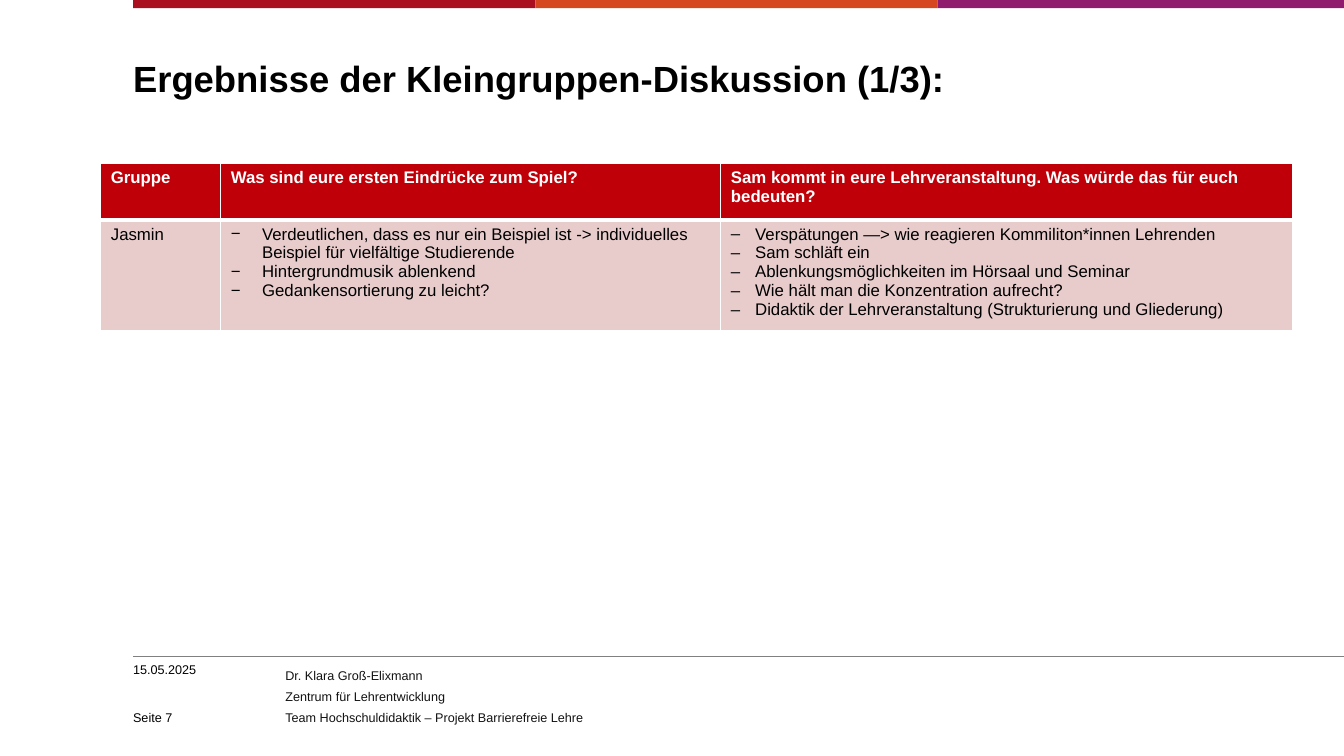
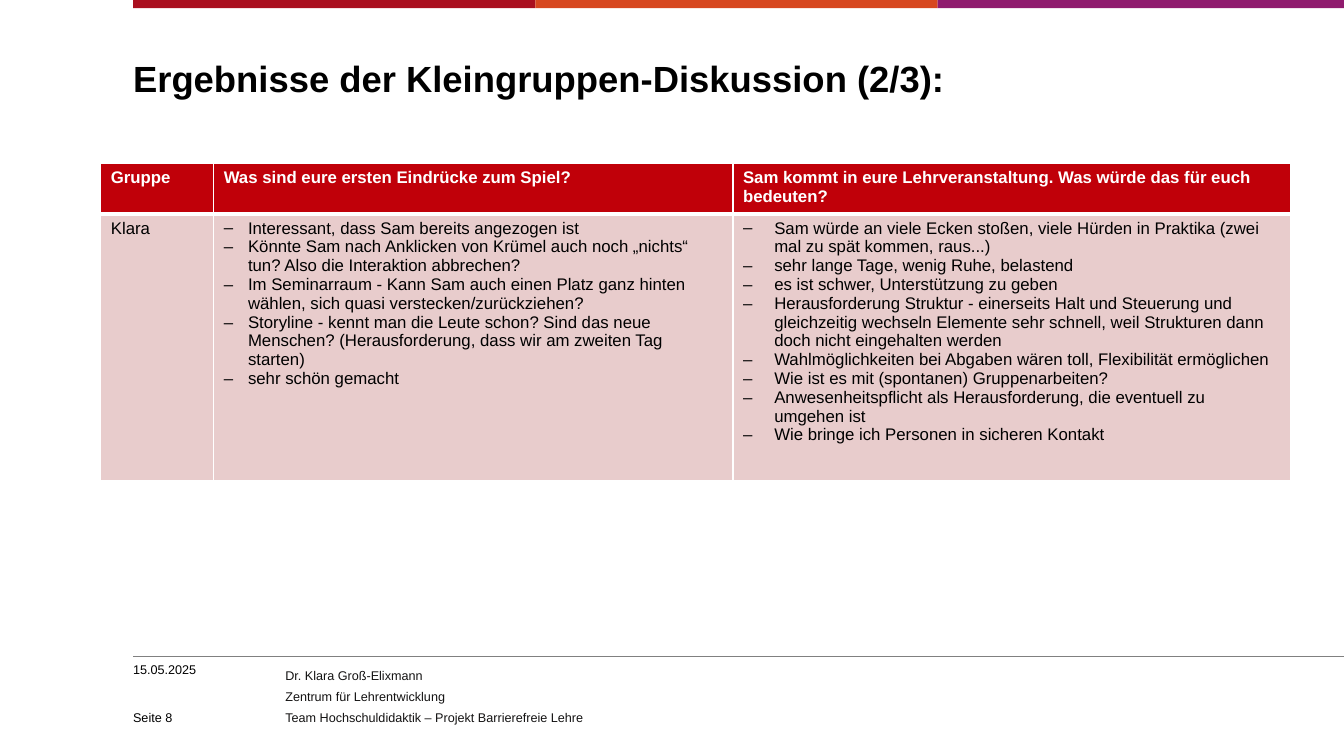
from pptx import Presentation
from pptx.dml.color import RGBColor
from pptx.enum import shapes, text
from pptx.oxml import parse_xml
from pptx.oxml.ns import nsdecls
from pptx.util import Inches, Pt

FONT = "Arial"
BLACK = RGBColor(0x00, 0x00, 0x00)
WHITE = RGBColor(0xFF, 0xFF, 0xFF)
FOOTER_GREY = RGBColor(0x14, 0x13, 0x13)
RULE_GREY = RGBColor(0x80, 0x80, 0x80)
HEADER_RED = RGBColor(0xC0, 0x00, 0x09)
BODY_PINK = RGBColor(0xE8, 0xCC, 0xCC)
BANDS = [
    (1.32, 3.99, RGBColor(0xAA, 0x0F, 0x1F)),
    (5.31, 3.99, RGBColor(0xD7, 0x47, 0x1F)),
    (9.30, 4.03, RGBColor(0x90, 0x1B, 0x6E)),
]
MARGIN = 1.32
SLIDE_WIDTH = 13.33

HEADINGS = [
    "Gruppe",
    "Was sind eure ersten Eindrücke zum Spiel?",
    "Sam kommt in eure Lehrveranstaltung. Was würde das für euch bedeuten?",
]
FOOTER = """Dr. Klara Groß-Elixmann
Zentrum für Lehrentwicklung
Team Hochschuldidaktik – Projekt Barrierefreie Lehre"""

# Each body cell: bullet, indent in inches, lines
GROUPS = [
    {
        "columns": [1.19, 4.96, 5.67],
        "rows": [0.56, 1.03],
        "cells": [
            ("", 0, ["Jasmin"]),
            ("−", 0.31, [
                "Verdeutlichen, dass es nur ein Beispiel ist -> individuelles Beispiel für vielfältige Studierende",
                "Hintergrundmusik ablenkend",
                "Gedankensortierung zu leicht?",
            ]),
            ("–", 0.24, [
                "Verspätungen —> wie reagieren Kommiliton*innen Lehrenden",
                "Sam schläft ein",
                "Ablenkungsmöglichkeiten im Hörsaal und Seminar",
                "Wie hält man die Konzentration aufrecht?",
                "Didaktik der Lehrveranstaltung (Strukturierung und Gliederung)",
            ]),
        ],
    },
    {
        "columns": [1.12, 5.15, 5.53],
        "rows": [0.47, 2.65],
        "cells": [
            ("", 0, ["Klara"]),
            ("–", 0.24, [
                "Interessant, dass Sam bereits angezogen ist",
                "Könnte Sam nach Anklicken von Krümel auch noch „nichts“ tun? Also die Interaktion abbrechen?",
                "Im Seminarraum - Kann Sam auch einen Platz ganz hinten wählen, sich quasi verstecken/zurückziehen?",
                "Storyline - kennt man die Leute schon? Sind das neue Menschen? "
                "(Herausforderung, dass wir am zweiten Tag starten)",
                "sehr schön gemacht",
            ]),
            ("–", 0.31, [
                "Sam würde an viele Ecken stoßen, viele Hürden in Praktika (zwei mal zu spät kommen, raus...)",
                "sehr lange Tage, wenig Ruhe, belastend",
                "es ist schwer, Unterstützung zu geben",
                "Herausforderung Struktur - einerseits Halt und Steuerung und gleichzeitig "
                "wechseln Elemente sehr schnell, weil Strukturen dann doch nicht eingehalten werden",
                "Wahlmöglichkeiten bei Abgaben wären toll, Flexibilität ermöglichen",
                "Wie ist es mit (spontanen) Gruppenarbeiten?",
                "Anwesenheitspflicht als Herausforderung, die eventuell zu umgehen ist",
                "Wie bringe ich Personen in sicheren Kontakt",
            ]),
        ],
    },
]


def add_text(slide, box, content, size, color=BLACK, bold=False, spacing=None,
             anchor=text.MSO_ANCHOR.TOP):
    """Add a text box without insets; spacing is the exact line height in points."""
    frame = slide.shapes.add_textbox(*map(Inches, box)).text_frame
    frame.margin_left = frame.margin_top = frame.margin_right = frame.margin_bottom = 0
    frame.word_wrap = True
    frame.vertical_anchor = anchor
    frame.text = content
    for paragraph in frame.paragraphs:
        if spacing:
            paragraph.line_spacing = Pt(spacing)
        for run in paragraph.runs:
            run.font.name, run.font.size = FONT, Pt(size)
            run.font.color.rgb, run.font.bold = color, bold


def fill_cell(cell, is_header, bullet, indent, lines):
    """Write, border and fill one table cell."""
    cell.text = "\n".join(lines)
    for paragraph in cell.text_frame.paragraphs:
        if bullet:
            properties = paragraph._p.get_or_add_pPr()
            properties.set("marL", str(Inches(indent)))
            properties.set("indent", str(-Inches(indent)))
            properties.append(parse_xml(f'<a:buFont {nsdecls("a")} typeface="{FONT}"/>'))
            properties.append(parse_xml(f'<a:buChar {nsdecls("a")} char="{bullet}"/>'))
        for run in paragraph.runs:
            run.font.name, run.font.size = FONT, Pt(12)
            run.font.bold = is_header
            run.font.color.rgb = WHITE if is_header else BLACK
    cell_properties = cell._tc.get_or_add_tcPr()
    thick_side = "lnB" if is_header else "lnT"
    for side in ("lnL", "lnR", "lnT", "lnB"):
        width = Pt(3 if side == thick_side else 1)
        cell_properties.append(parse_xml(
            f'<a:{side} {nsdecls("a")} w="{width}"><a:solidFill>'
            f'<a:srgbClr val="{WHITE}"/></a:solidFill></a:{side}>'))
    cell.fill.solid()
    cell.fill.fore_color.rgb = HEADER_RED if is_header else BODY_PINK


presentation = Presentation()
presentation.slide_width = Inches(SLIDE_WIDTH)
presentation.slide_height = Inches(7.5)

for number, group in enumerate(GROUPS, start=1):
    slide = presentation.slides.add_slide(presentation.slide_layouts[6])

    add_text(slide, (2.83, 6.57, 5.75, 0.6), FOOTER, 9, FOOTER_GREY, spacing=15)
    for left, width, color in BANDS:
        band = slide.shapes.add_shape(
            shapes.MSO_SHAPE.RECTANGLE, Inches(left), 0, Inches(width), Inches(0.08))
        band.shadow.inherit = False
        band.fill.solid()
        band.fill.fore_color.rgb = color
        band.line.fill.background()
    rule = slide.shapes.add_connector(
        shapes.MSO_CONNECTOR.STRAIGHT,
        Inches(MARGIN), Inches(6.51), Inches(SLIDE_WIDTH), Inches(6.51))
    rule.line.color.rgb = RULE_GREY
    rule.line.width = Pt(0.5)
    rule._element.spPr.append(parse_xml(f'<a:effectLst {nsdecls("a")}/>'))

    add_text(slide, (MARGIN, 0.57, 11.81, 0.98),
             f"Ergebnisse der Kleingruppen-Diskussion ({number}/3):", 26, bold=True, spacing=30)

    table = slide.shapes.add_table(
        2, 3, Inches(1), Inches(1.62),
        Inches(sum(group["columns"])), Inches(sum(group["rows"]))).table
    for column, width in zip(table.columns, group["columns"]):
        column.width = Inches(width)
    for row, height in zip(table.rows, group["rows"]):
        row.height = Inches(height)
    for index, heading in enumerate(HEADINGS):
        fill_cell(table.cell(0, index), True, "", 0, [heading])
        fill_cell(table.cell(1, index), False, *group["cells"][index])

    add_text(slide, (MARGIN, 6.57, 1.42, 0.2), "15.05.2025", 9)
    add_text(slide, (MARGIN, 6.96, 1.42, 0.23), f"Seite {number + 6}", 9,
             anchor=text.MSO_ANCHOR.BOTTOM)

presentation.save("out.pptx")
